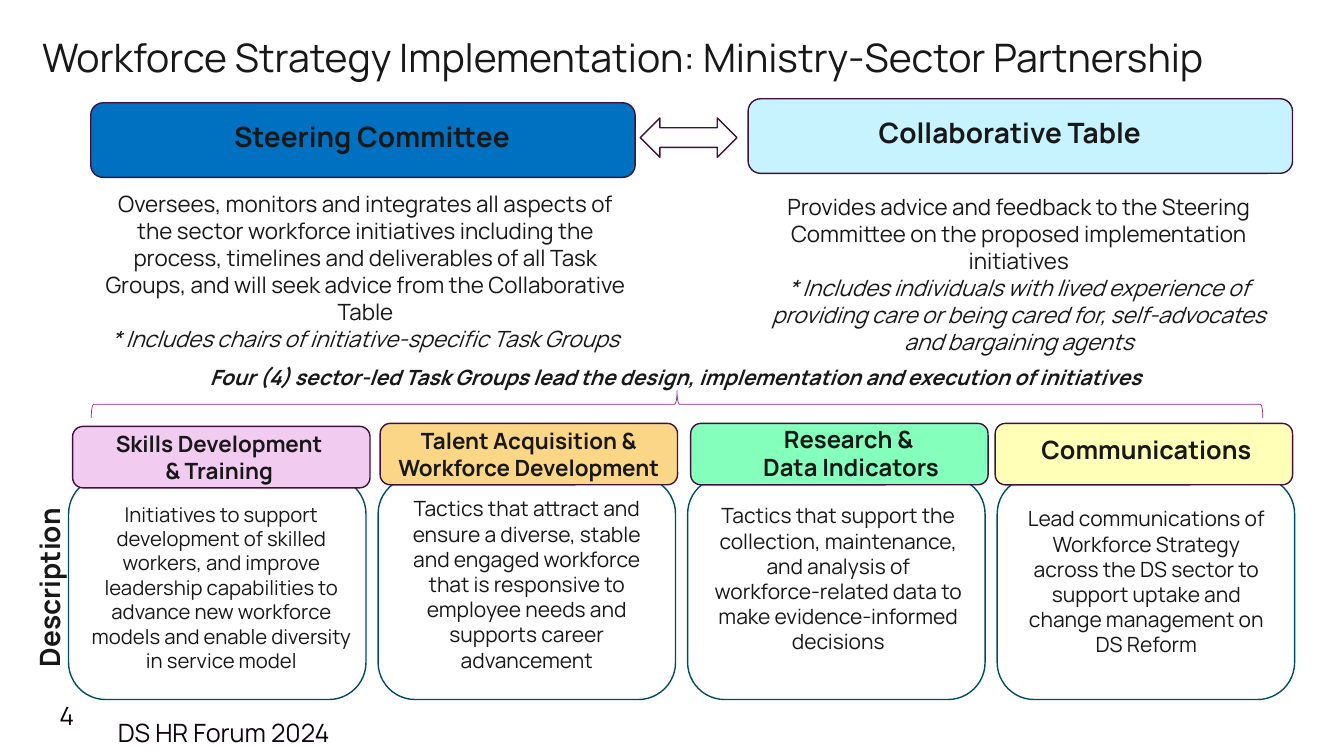
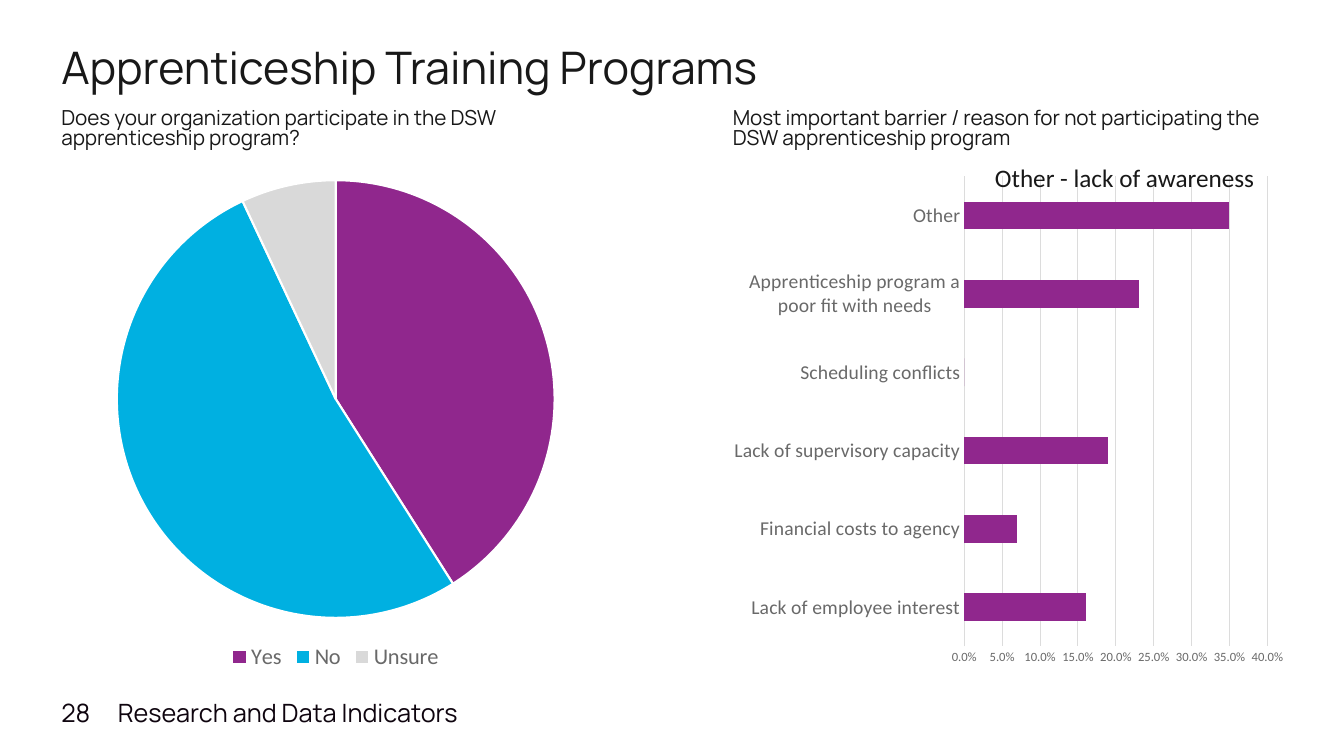
from dataclasses import dataclass

from pptx import Presentation
from pptx.chart.data import CategoryChartData
from pptx.dml.color import RGBColor
from pptx.enum.chart import XL_CHART_TYPE as ChartType
from pptx.enum.chart import XL_LEGEND_POSITION as LegendPosition
from pptx.enum.chart import XL_TICK_MARK as TickMark
from pptx.enum.shapes import MSO_SHAPE as Shape
from pptx.enum.text import MSO_ANCHOR as Anchor
from pptx.enum.text import PP_ALIGN as Align
from pptx.util import Inches, Pt

# Shared style
INK = RGBColor(0x18, 0x18, 0x18)
FOOTER_INK = RGBColor(0x0E, 0x04, 0x0E)
WHITE = RGBColor(0xFF, 0xFF, 0xFF)
PURPLE = RGBColor(0x90, 0x27, 0x8D)
PLUM = RGBColor(0x3F, 0x11, 0x3E)
TEAL = RGBColor(0x00, 0x4D, 0x63)
BLUE = RGBColor(0x00, 0x70, 0xC0)
PALE_BLUE = RGBColor(0xC6, 0xF3, 0xFF)
PINK = RGBColor(0xF1, 0xCC, 0xF0)
AMBER = RGBColor(0xFA, 0xD6, 0x86)
MINT = RGBColor(0x85, 0xFF, 0xBC)
YELLOW = RGBColor(0xFF, 0xFF, 0xB7)
CYAN = RGBColor(0x00, 0xB0, 0xE1)
SILVER = RGBColor(0xD9, 0xD9, 0xD9)
GRID = RGBColor(0xDC, 0xDC, 0xDC)
AXIS_INK = RGBColor(0x69, 0x69, 0x69)
FONT = "Manrope"
CHART_FONT = "Calibri"


def style_font(font, size, color, name=FONT, bold=False, italic=False):
    font.size, font.name = Pt(size), name
    font.bold, font.italic = bold, italic
    font.color.rgb = color


def write(frame, lines, size, align=Align.LEFT, anchor=Anchor.TOP, color=INK,
          name=FONT, bold=False, italic=False, spacing=None):
    """Fill a frame; a line starting with * is an italic remark."""
    frame.word_wrap = True
    frame.vertical_anchor = anchor
    for number, line in enumerate(lines):
        paragraph = frame.add_paragraph() if number else frame.paragraphs[0]
        paragraph.alignment = align
        if spacing:
            paragraph.line_spacing = spacing
        run = paragraph.add_run()
        run.text = line
        style_font(run.font, size, color, name, bold,
                   italic or line.startswith("*"))


def add_text(slide, box, lines, size, **style):
    label = slide.shapes.add_textbox(*map(Inches, box))
    write(label.text_frame, lines, size, **style)
    return label


def add_panel(slide, kind, box, fill, line, width=1):
    panel = slide.shapes.add_shape(kind, *map(Inches, box))
    panel.shadow.inherit = False
    if fill is None:
        panel.fill.background()
    else:
        panel.fill.solid()
        panel.fill.fore_color.rgb = fill
    panel.line.color.rgb = line
    panel.line.width = Pt(width)
    return panel


def add_footer(slide, number, name, number_box, name_box):
    for text, box in ((number, number_box), (name, name_box)):
        add_text(slide, box, [text], 18, anchor=Anchor.MIDDLE, color=FOOTER_INK)


# Partnership slide
@dataclass
class TaskGroup:
    title: list
    title_size: int
    fill: RGBColor
    header_shift: tuple  # from the card's top left corner
    note: str
    note_size: float
    note_box: tuple  # shift right, shift down, width
    title_box: tuple = None  # relative to the header


TASK_GROUPS = [
    TaskGroup(["Skills Development ", "& Training "], 16, PINK, (0.04, -0.5),
              "Initiatives to support development of skilled workers, and "
              "improve leadership capabilities to advance new workforce models "
              "and enable diversity in service model", 14.5, (0.11, 0.2, 2.81)),
    TaskGroup(["Talent Acquisition & Workforce Development"], 16, AMBER,
              (0.02, -0.53),
              "Tactics that attract and ensure a diverse, stable and engaged "
              "workforce that is responsive to employee needs and supports "
              "career advancement", 15, (0.09, 0.14, 2.77)),
    TaskGroup(["Research & ", "Data Indicators"], 17, MINT, (0.03, -0.53),
              "Tactics that support the collection, maintenance, and analysis "
              "of workforce-related data to make evidence-informed decisions",
              15, (0.16, 0.21, 2.67), (0.57, -0.04, 2.04, 0.67)),
    TaskGroup(["Communications"], 18, YELLOW, (-0.02, -0.53),
              "Lead communications of Workforce Strategy across the DS sector "
              "to support uptake and change management on DS Reform",
              15, (0.11, 0.24, 2.74), (0.13, 0.06, 2.74, 0.4)),
]


def add_committee(slide, left, top, title, fill, title_box, role_box, role):
    """Banner with its role below; inner boxes are relative to the banner."""
    add_panel(slide, Shape.ROUNDED_RECTANGLE, (left, top, 5.4, 0.74), fill, PLUM)
    for (dx, dy, width, height), lines, size, bold in (
            (title_box, [title], 20, True), (role_box, role, 16, False)):
        add_text(slide, (left + dx, top + dy, width, height), lines, size,
                 align=Align.CENTER, bold=bold)


def add_task_group(slide, left, top, group):
    add_panel(slide, Shape.ROUNDED_RECTANGLE, (left, top, 2.95, 2.21),
              WHITE, TEAL)
    dx, dy, width = group.note_box
    add_text(slide, (left + dx, top + dy, width, 1.8), [group.note],
             group.note_size, align=Align.CENTER)
    # Header over the card's top edge
    dx, dy = group.header_shift
    header_left, header_top = left + dx, top + dy
    header = add_panel(slide, Shape.ROUNDED_RECTANGLE,
                       (header_left, header_top, 2.95, 0.61), group.fill, PLUM)
    if group.title_box:
        dx, dy, width, height = group.title_box
        add_text(slide, (header_left + dx, header_top + dy, width, height),
                 group.title, group.title_size, align=Align.CENTER, bold=True)
    else:
        write(header.text_frame, group.title, group.title_size,
              align=Align.CENTER, anchor=Anchor.MIDDLE, bold=True)


def build_partnership(slide):
    add_text(slide, (0.32, 0.28, 12.86, 0.57),
             ["Workforce Strategy Implementation: Ministry-Sector Partnership"],
             28)
    # Two committees
    add_committee(
        slide, 0.9, 1.02, "Steering Committee", BLUE,
        (0.87, 0.12, 3.84, 0.44), (0, 0.82, 5.45, 1.72),
        ["Oversees, monitors and integrates all aspects of the sector workforce "
         "initiatives including the process, timelines and deliverables of all "
         "Task Groups, and will seek advice from the Collaborative Table",
         "* Includes chairs of initiative-specific Task Groups"])
    add_committee(
        slide, 7.42, 0.98, "Collaborative Table", PALE_BLUE,
        (1.1, 0.12, 2.99, 0.44), (0, 0.89, 5.37, 1.72),
        ["Provides advice and feedback to the Steering Committee on the proposed "
         "implementation initiatives",
         "* Includes individuals with lived experience of providing care or being "
         "cared for, self-advocates and bargaining agents"])
    add_panel(slide, Shape.LEFT_RIGHT_ARROW, (6.35, 1.17, 0.96, 0.39),
              WHITE, PLUM)

    # Bracket over the task groups
    add_text(slide, (0.88, 3.57, 11.69, 0.35),
             ["Four (4) sector-led Task Groups lead the design, implementation "
              "and execution of initiatives "],
             15, align=Align.CENTER, bold=True, italic=True)
    brace = add_panel(slide, Shape.RIGHT_BRACE, (6.58, -1.8, 0.27, 11.62),
                      None, PURPLE, 0.5)
    brace.rotation = 270

    # Task groups
    for column, group in enumerate(TASK_GROUPS):
        add_task_group(slide, 0.68 + 3.07 * column, 4.73, group)
    side_label = add_text(slide, (-0.58, 5.61, 2.14, 0.44), ["Description"], 20,
                          align=Align.CENTER, bold=True)
    side_label.rotation = 270
    add_footer(slide, "4", "DS HR Forum 2024",
               (0.49, 6.9, 0.56, 0.4), (1.07, 7.07, 3.67, 0.4))


# Apprenticeship slide
def add_survey_chart(slide, box, kind, answers, number_format="General"):
    data = CategoryChartData(number_format=number_format)
    data.categories = list(answers)
    data.add_series("Series 1", list(answers.values()))
    chart = slide.shapes.add_chart(kind, *map(Inches, box), data).chart
    chart.has_title = False
    chart.has_legend = False
    style_font(chart.font, 10, INK, CHART_FONT)
    return chart


def add_participation_pie(slide, box):
    chart = add_survey_chart(slide, box, ChartType.PIE,
                             {"Yes": 41, "No": 52, "Unsure": 7})
    plot = chart.plots[0]
    plot.vary_by_categories = True
    for index, color in enumerate((PURPLE, CYAN, SILVER)):
        slice_format = plot.series[0].points[index].format
        slice_format.fill.solid()
        slice_format.fill.fore_color.rgb = color
        slice_format.line.color.rgb = WHITE
        slice_format.line.width = Pt(1.5)
    chart.has_legend = True
    chart.legend.position = LegendPosition.BOTTOM
    chart.legend.include_in_layout = False
    style_font(chart.legend.font, 16, AXIS_INK, CHART_FONT)


def add_barrier_bars(slide, box):
    chart = add_survey_chart(slide, box, ChartType.BAR_CLUSTERED, {
        "Lack of employee interest": 0.16,
        "Financial costs to agency": 0.07,
        "Lack of supervisory capacity": 0.19,
        "Scheduling conflicts": 0,
        "Apprenticeship program a poor fit with needs": 0.23,
        "Other": 0.35,
    }, "0.0%")
    plot = chart.plots[0]
    plot.vary_by_categories = False
    plot.gap_width = 182
    bars = plot.series[0].format
    bars.fill.solid()
    bars.fill.fore_color.rgb = PURPLE

    barriers, share = chart.category_axis, chart.value_axis
    for axis, size in ((barriers, 14), (share, 9)):
        axis.major_tick_mark = axis.minor_tick_mark = TickMark.NONE
        style_font(axis.tick_labels.font, size, AXIS_INK, CHART_FONT)
    share.minimum_scale, share.maximum_scale, share.major_unit = 0, 0.4, 0.05
    share.tick_labels.number_format = "0.0%"
    share.tick_labels.number_format_is_linked = False
    share.format.line.fill.background()
    share.has_major_gridlines = True
    for rule in (barriers.format.line, share.major_gridlines.format.line):
        rule.color.rgb = GRID
        rule.width = Pt(0.75)


def add_question(slide, left, width, question, add_answer):
    """Question with its chart below."""
    add_text(slide, (left, 1.04, width, 0.52), [question], 14.8, spacing=0.8)
    add_answer(slide, (left, 1.65, width, 5.05))


def build_apprenticeship(slide):
    add_text(slide, (0.51, 0.4, 12.33, 0.52),
             ["Apprenticeship Training Programs"], 32, spacing=0.9)
    add_question(slide, 0.51, 5.64,
                 "Does your organization participate in the DSW apprenticeship "
                 "program?", add_participation_pie)
    add_question(slide, 7.17, 5.67,
                 "Most important barrier / reason for not participating the DSW "
                 "apprenticeship program", add_barrier_bars)
    add_text(slide, (9.77, 1.56, 3.06, 0.4), ["Other - lack of awareness"], 18,
             name=CHART_FONT)
    add_footer(slide, "28", "Research and Data Indicators",
               (0.51, 6.87, 0.56, 0.4), (1.07, 6.87, 3.67, 0.4))


def main():
    deck = Presentation()
    deck.slide_width, deck.slide_height = Inches(13.33), Inches(7.5)
    for build in (build_partnership, build_apprenticeship):
        build(deck.slides.add_slide(deck.slide_layouts[6]))
    deck.save("out.pptx")


if __name__ == "__main__":
    main()
